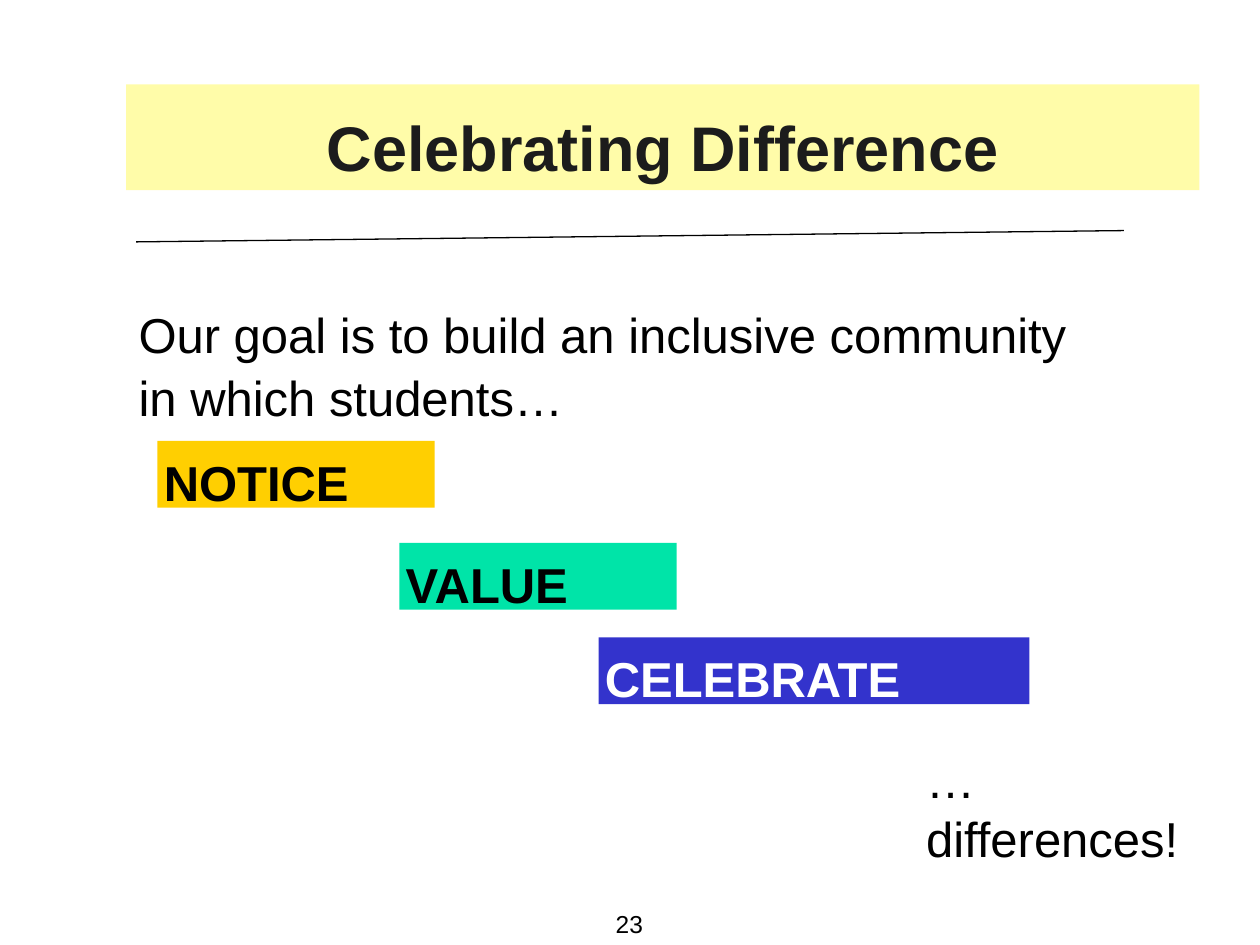
from lxml import etree
from pptx import Presentation
from pptx.dml.color import RGBColor
from pptx.enum.shapes import MSO_CONNECTOR, MSO_SHAPE
from pptx.enum.text import MSO_ANCHOR, PP_ALIGN
from pptx.oxml.ns import qn
from pptx.util import Inches, Pt

RECTANGLE = MSO_SHAPE.RECTANGLE
STRAIGHT = MSO_CONNECTOR.STRAIGHT
TOP, BOTTOM = MSO_ANCHOR.TOP, MSO_ANCHOR.BOTTOM
LEFT, CENTER = PP_ALIGN.LEFT, PP_ALIGN.CENTER
FONT = "Arial"
INSET = 0.05
TOP_INSET = 0.09
TAG_HEIGHT = 0.53
TAGS = [
    ("NOTICE", 1.25, 3.5, 2.2, "FFCF01", "000000"),
    ("VALUE", 3.17, 4.31, 2.2, "00E4A8", "000000"),
    ("CELEBRATE", 4.75, 5.06, 3.42, "3333CC", "FFFFFF"),
]


def color(value):
    return RGBColor.from_string(value)


def add_rectangle(slide, box, fill):
    shape = slide.shapes.add_shape(RECTANGLE, *map(Inches, box))
    shape.shadow.inherit = False
    shape.fill.solid()
    shape.fill.fore_color.rgb = color(fill)
    shape.line.fill.background()
    return shape


def add_text_box(slide, box):
    return slide.shapes.add_textbox(*map(Inches, box))


def write_text(shape, text, size=28, ink="000000", bold=False, align=LEFT,
               anchor=TOP, top=TOP_INSET, wrap=True, gap=0):
    frame = shape.text_frame
    frame.word_wrap = wrap
    frame.vertical_anchor = anchor
    frame.margin_left = frame.margin_right = frame.margin_bottom = Inches(INSET)
    frame.margin_top = Inches(top)
    for index, line in enumerate(text.split("\n")):
        paragraph = frame.add_paragraph() if index else frame.paragraphs[0]
        paragraph.alignment = align
        if index:
            paragraph.space_before = Pt(gap)
        run = paragraph.add_run()
        run.text = line
        run.font.name = FONT
        run.font.size = Pt(size)
        run.font.bold = bold
        run.font.color.rgb = color(ink)


def add_title(slide, box):
    left, top, width, height = box
    add_rectangle(slide, box, "FFFCA9")
    title_box = (left + INSET, top + height * 0.2, width - 2 * INSET, height * 0.8)
    write_text(add_text_box(slide, title_box), "Celebrating Difference", size=36,
               ink="1C1C1C", bold=True, align=CENTER, anchor=BOTTOM, top=INSET)


def add_rule(slide, start, end):
    line = slide.shapes.add_connector(STRAIGHT, *map(Inches, start + end))
    line.line.color.rgb = color("000000")
    line.line.width = Pt(0.75)
    etree.SubElement(line._element.spPr, qn("a:effectLst"))


def add_goal(slide, box):
    write_text(add_text_box(slide, box),
               "Our goal is to build an inclusive community\nin which students…",
               gap=2)


def add_tag(slide, box, text, fill, ink):
    write_text(add_rectangle(slide, box, fill), text, ink=ink, bold=True)


def add_closing(slide, box):
    write_text(add_text_box(slide, box), "…differences!")


def add_page_number(slide, box):
    write_text(add_text_box(slide, box), "23", size=14, align=CENTER,
               anchor=BOTTOM, top=INSET, wrap=False)


def main():
    presentation = Presentation()
    presentation.slide_width = Inches(10)
    presentation.slide_height = Inches(7.5)
    slide = presentation.slides.add_slide(presentation.slide_layouts[6])
    add_page_number(slide, (4.83, 7.18, 0.33, 0.32))
    add_title(slide, (1, 0.67, 8.52, 0.84))
    add_goal(slide, (1.05, 2.33, 7.62, 0.98))
    for text, left, top, width, fill, ink in TAGS:
        add_tag(slide, (left, top, width, TAG_HEIGHT), text, fill, ink)
    add_closing(slide, (7.3, 5.86, 2.48, 0.98))
    add_rule(slide, (1.08, 1.92), (8.92, 1.83))
    presentation.save("out.pptx")


if __name__ == "__main__":
    main()
